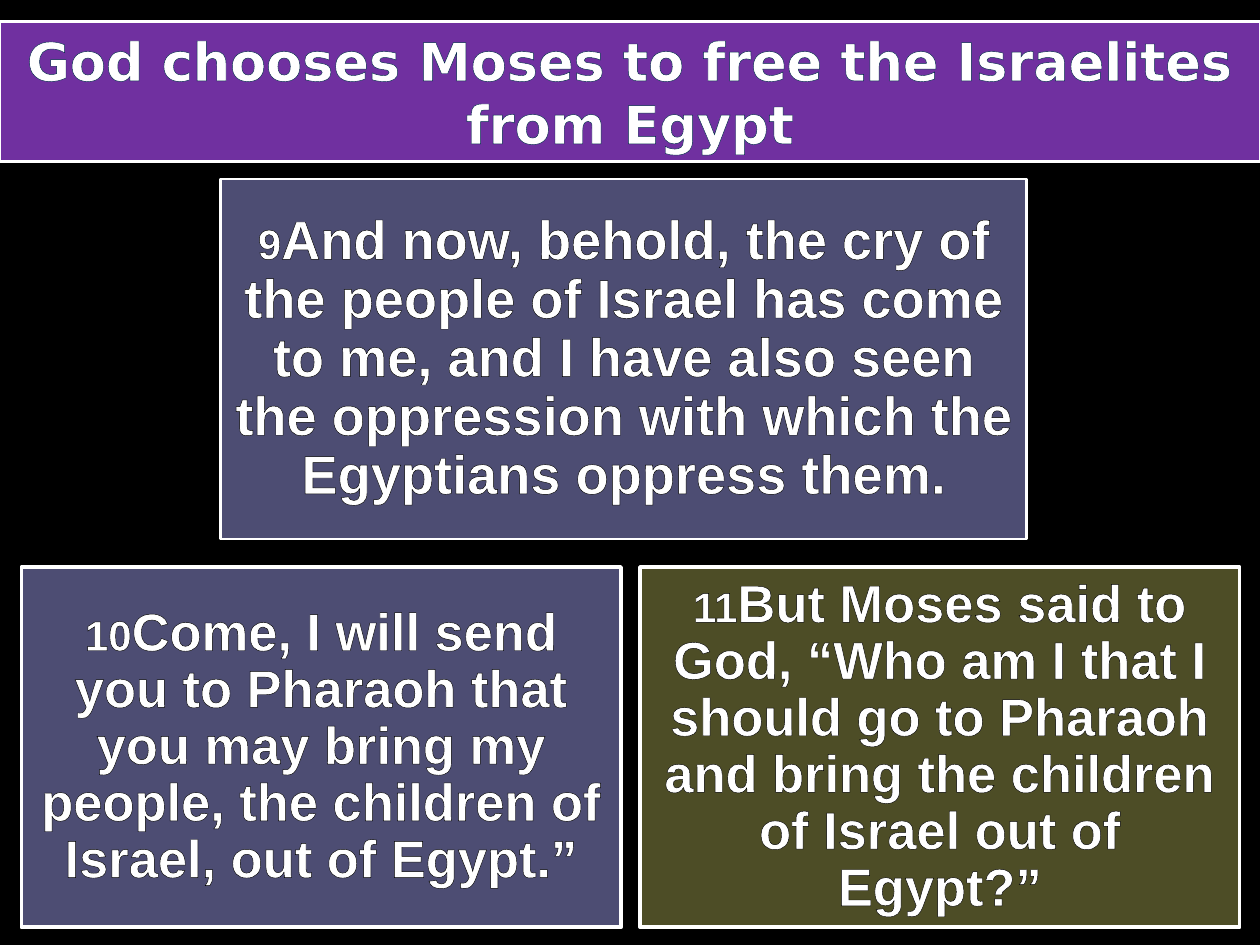
"""Build a slide on God choosing Moses to free the Israelites."""
from lxml.etree import SubElement
from pptx import Presentation
from pptx.dml.color import RGBColor
from pptx.enum.shapes import MSO_SHAPE as Shape
from pptx.enum.text import MSO_ANCHOR as Anchor, PP_ALIGN as Align
from pptx.oxml.ns import qn
from pptx.util import Inches, Pt

WHITE = RGBColor(0xFF, 0xFF, 0xFF)
BLACK = RGBColor(0x00, 0x00, 0x00)
NAVY = RGBColor(0x00, 0x29, 0x48)
PURPLE = RGBColor(0x70, 0x30, 0xA0)
SLATE = RGBColor(0x4D, 0x4D, 0x73)
OLIVE = RGBColor(0x4D, 0x4D, 0x26)

TITLE = "God chooses Moses to free the Israelites from Egypt"
VERSES = [
    ("9", "And now, behold, the cry of the people of Israel has come to me, "
          "and I have also seen the oppression with which the Egyptians oppress them.",
     31, (1.75, 1.42, 6.4), SLATE, 1.5),
    ("10", "Come, I will send you to Pharaoh that you may bring my people, "
           "the children of Israel, out of Egypt.”",
     30, (0.17, 4.5, 4.76), SLATE, 2),
    ("11", "But Moses said to God, “Who am I that I should go to Pharaoh "
           "and bring the children of Israel out of Egypt?”",
     30, (5.08, 4.5, 4.76), OLIVE, 2),
]
VERSE_HEIGHT = 2.86
NUMBER_SIZE = 24


def add_span(para, text, size, font, outline):
    span = para.add_run()
    span.text = text
    span.font.name = font
    span.font.size = Pt(size)
    span.font.bold = True
    span.font.color.rgb = WHITE
    properties = span.font._element
    line = SubElement(properties, qn("a:ln"), w=str(Pt(0.25)))
    fill = SubElement(line, qn("a:solidFill"))
    SubElement(fill, qn("a:srgbClr"), val=str(outline))
    properties.insert(0, line)


def add_box(slide, place, fill, line_width, spans, font, outline):
    box = slide.shapes.add_shape(Shape.RECTANGLE, *map(Inches, place))
    box.shadow.inherit = False
    box.fill.solid()
    box.fill.fore_color.rgb = fill
    box.line.color.rgb = WHITE
    box.line.width = Pt(line_width)
    frame = box.text_frame
    frame.word_wrap = True
    frame.vertical_anchor = Anchor.MIDDLE
    para = frame.paragraphs[0]
    para.alignment = Align.CENTER
    for text, size in spans:
        add_span(para, text, size, font, outline)
    return frame


def main():
    deck = Presentation()
    deck.slide_width, deck.slide_height = Inches(10), Inches(7.5)
    slide = deck.slides.add_slide(deck.slide_layouts[6])
    slide.background.fill.solid()
    slide.background.fill.fore_color.rgb = BLACK

    for number, verse, size, place, fill, line_width in VERSES:
        spans = [(number, NUMBER_SIZE), (verse, size)]
        frame = add_box(slide, (*place, VERSE_HEIGHT), fill, line_width,
                        spans, "Arial", BLACK)
        frame.margin_top = frame.margin_bottom = Inches(0.1)
        frame.paragraphs[0].line_spacing = 0.9

    add_box(slide, (0, 0.17, 10, 1.11), PURPLE, 1.5,
            [(TITLE, 30)], "DejaVu Sans", NAVY)
    deck.save("out.pptx")


if __name__ == "__main__":
    main()
